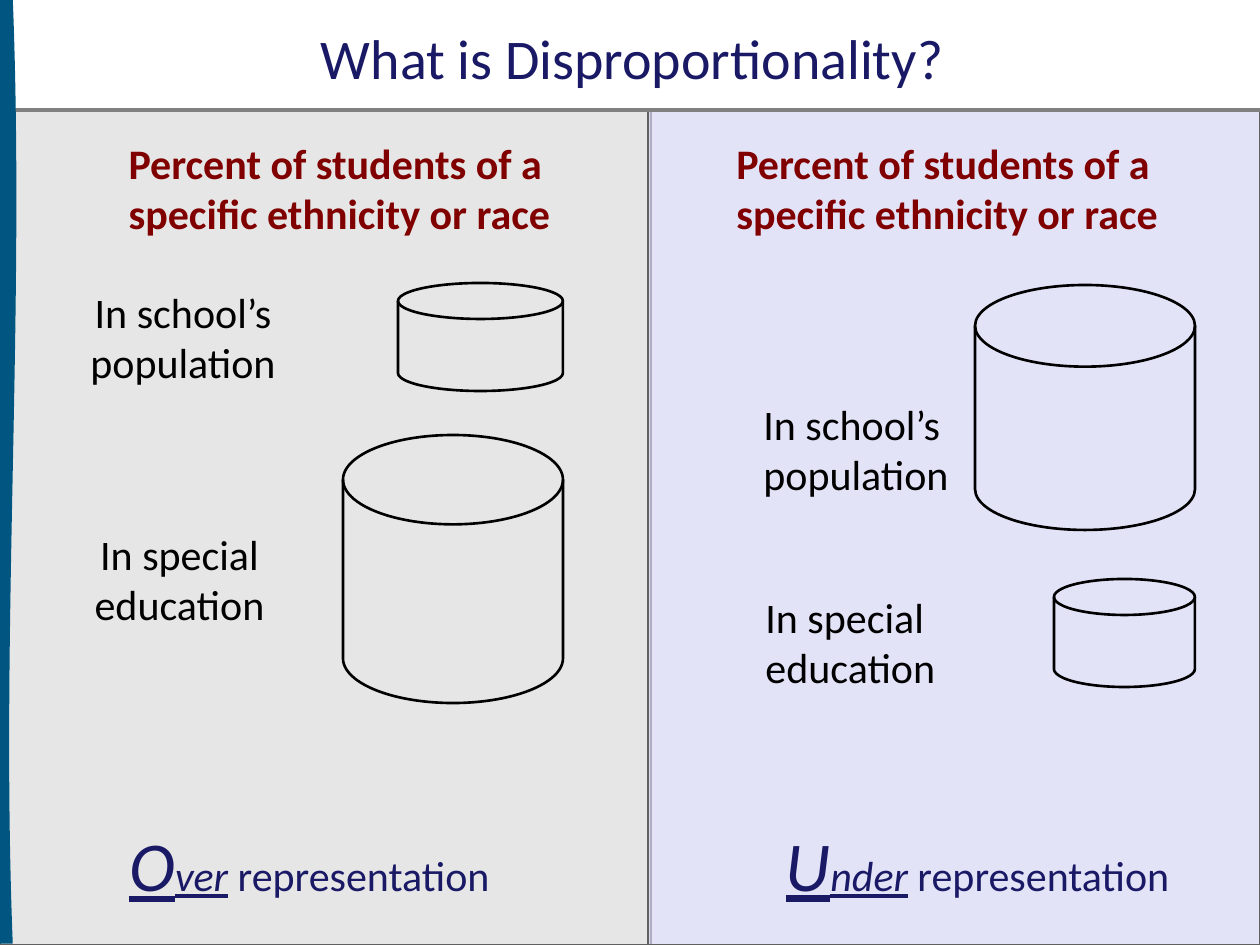
from pptx import Presentation
from pptx.dml.color import RGBColor
from pptx.enum.shapes import MSO_CONNECTOR, MSO_SHAPE
from pptx.enum.text import MSO_ANCHOR, MSO_AUTO_SIZE, PP_ALIGN
from pptx.oxml.ns import qn
from pptx.util import Emu, Pt
from lxml.etree import SubElement

SCALE = 914400 / 126
COLORS = {
    "navy": "191966", "maroon": "800000", "black": "000000",
    "gray": "E6E6E6", "lavender": "D6D6F5", "border": "606060",
    "rule": "808080", "teal": "005680",
}
HEADING = "Percent of students of a specific ethnicity or race"
SCHOOL = "In school’s population"
SPECIAL = "In special education"


def px(n):
    return Emu(round(n * SCALE))


def rgb(name):
    return RGBColor.from_string(COLORS[name])


class SlideBuilder:
    """Hold the text style and the current slide, and add each kind of element."""

    def __init__(self, slide, font="Calibri", size=24):
        self.s = slide
        self.font = font
        self.size = size

    def set_text(self, sp, box, runs, color, align=PP_ALIGN.LEFT, anchor=MSO_ANCHOR.TOP):
        sp.left, sp.top, sp.width, sp.height = map(px, box)
        tf = sp.text_frame
        tf.word_wrap = True
        tf.auto_size = MSO_AUTO_SIZE.NONE
        tf.vertical_anchor = anchor
        p = tf.paragraphs[0]
        p.alignment = align
        p.space_before = Pt(0)
        for text, style in runs:
            r = p.add_run()
            r.text = text
            r.font.name = self.font
            r.font.size = Pt(style.get("size", self.size))
            r.font.bold = style.get("bold", False)
            r.font.italic = style.get("italic", False)
            r.font.underline = style.get("underline", False)
            r.font.color.rgb = rgb(color)
        return p

    def title(self, box, text):
        self.set_text(self.s.shapes.title, box, [(text, {"size": 32})], "navy",
                      PP_ALIGN.CENTER, MSO_ANCHOR.MIDDLE)

    def body(self, box, text):
        sp = self.s.placeholders[1]
        self.s.shapes._spTree.append(sp._element)
        p = self.set_text(sp, box, [(text, {"bold": True})], "maroon")
        pPr = p._p.get_or_add_pPr()
        pPr.set("marL", "0")
        pPr.set("indent", "0")
        SubElement(pPr, qn("a:buNone"))

    def text(self, box, runs, color="black", **layout):
        sp = self.s.shapes.add_textbox(*map(px, box))
        self.set_text(sp, box, runs, color, **layout)

    def caption(self, box, initial, rest, tail):
        marked = {"italic": True, "underline": True}
        runs = [(initial, {"size": 40, **marked}), (rest, marked), (tail, {})]
        self.text(box, runs, "navy", align=PP_ALIGN.CENTER, anchor=MSO_ANCHOR.MIDDLE)

    def shape(self, kind, box, fill=None, line=None, width=0.75, alpha=None, rotation=0):
        sp = self.s.shapes.add_shape(kind, *map(px, box))
        sp.shadow.inherit = False
        sp.rotation = rotation
        if fill:
            sp.fill.solid()
            sp.fill.fore_color.rgb = rgb(fill)
        else:
            sp.fill.background()
        if alpha:
            clr = sp._element.spPr.find(qn("a:solidFill"))[0]
            SubElement(clr, qn("a:alpha")).set("val", str(alpha * 1000))
        if line:
            sp.line.color.rgb = rgb(line)
            sp.line.width = Pt(width)
        else:
            sp.line.fill.background()

    def disk(self, box):
        self.shape(MSO_SHAPE.FLOWCHART_MAGNETIC_DISK, box, line="black", width=1.5)

    def rule(self, x1, y1, x2, y2):
        sp = self.s.shapes.add_connector(MSO_CONNECTOR.STRAIGHT, *map(px, (x1, y1, x2, y2)))
        sp.line.color.rgb = rgb("rule")
        sp.line.width = Pt(2.25)
        SubElement(sp._element.spPr, qn("a:effectLst"))


def main():
    prs = Presentation()
    prs.slide_width, prs.slide_height = px(1260), px(945)
    b = SlideBuilder(prs.slides.add_slide(prs.slide_layouts[1]))

    b.title((244, 6, 777, 103), "What is Disproportionality?")
    b.shape(MSO_SHAPE.RECTANGLE, (0, 110, 651, 835), "gray", "border")
    b.shape(MSO_SHAPE.RECTANGLE, (648, 110, 612, 835), "lavender", "border", alpha=66)
    b.body((116, 131, 451, 86), HEADING)
    b.text((724, 131, 451, 86), [(HEADING, {"bold": True})], "maroon")
    b.rule(0, 110, 1260, 110)

    for box, label, align in (
        ((67, 280, 232, 105), SCHOOL, PP_ALIGN.CENTER),
        ((61, 522, 237, 105), SPECIAL, PP_ALIGN.CENTER),
        ((751, 392, 232, 105), SCHOOL, PP_ALIGN.LEFT),
        ((753, 585, 237, 105), SPECIAL, PP_ALIGN.LEFT),
    ):
        b.text(box, [(label, {})], align=align)

    for box in ((398, 283, 165, 108), (343, 435, 220, 268),
                (975, 285, 220, 245), (1054, 579, 141, 108)):
        b.disk(box)

    b.caption((102, 796, 415, 136), "O", "ver", " representation")
    b.caption((770, 816, 415, 95), "U", "nder", " representation")
    b.shape(MSO_SHAPE.WAVE, (-471, 456, 945, 30), "teal", rotation=270)

    prs.save("out.pptx")


if __name__ == "__main__":
    main()
